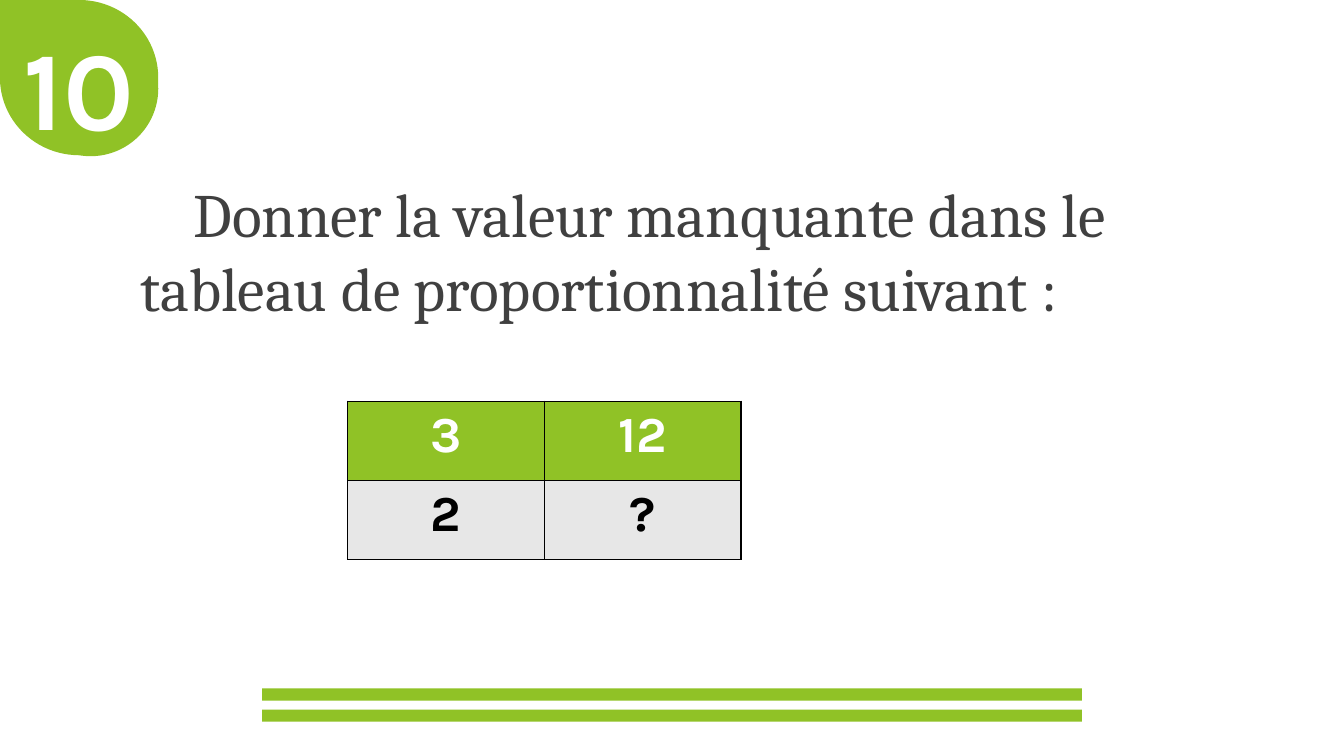
"""Build the quiz slide asking for the missing value of a proportionality table."""
from lxml import etree
from pptx import Presentation
from pptx.dml.color import RGBColor
from pptx.enum import shapes, text
from pptx.oxml import ns
from pptx.util import Inches, Pt

COLORS = {"green": "90C226", "white": "FFFFFF", "black": "000000",
          "question": "404040", "gray": "E7E7E7"}


def write(frame, words, size, color, font="Karla", bold=False,
          align=text.PP_ALIGN.CENTER):
    frame.text = words
    paragraph = frame.paragraphs[0]
    paragraph.alignment = align
    paragraph.space_before = Pt(0)
    font_format = paragraph.runs[0].font
    font_format.name = font
    font_format.size = Pt(size)
    font_format.bold = bold
    font_format.color.rgb = RGBColor.from_string(COLORS[color])
    return paragraph


def place(item, left, top, width, height):
    item.left, item.top = Inches(left), Inches(top)
    item.width, item.height = Inches(width), Inches(height)


presentation = Presentation()
presentation.slide_width = Inches(13.33)
presentation.slide_height = Inches(7.5)
slide = presentation.slides.add_slide(presentation.slide_layouts[1])
number, question = slide.placeholders

green_shapes = []
for preset, left, top, width, height in [
    (shapes.MSO_SHAPE.TEAR, 0, 0, 1.57, 1.54),
    (shapes.MSO_SHAPE.OVAL, 0.23, 0.21, 1.34, 1.34),
    (shapes.MSO_SHAPE.RECTANGLE, 2.6, 6.83, 8.13, 0.12),
    (shapes.MSO_SHAPE.RECTANGLE, 2.6, 7.04, 8.13, 0.12),
]:
    shape = slide.shapes.add_shape(preset, Inches(left), Inches(top),
                                   Inches(width), Inches(height))
    shape.shadow.inherit = False
    shape.fill.solid()
    shape.fill.fore_color.rgb = RGBColor.from_string(COLORS["green"])
    shape.line.fill.background()
    green_shapes.append(shape)
teardrop, disc = green_shapes[:2]
teardrop.element.spPr.xfrm.set("flipH", "1")

place(number, 0.13, 0.13, 1.34, 1.34)
write(number.text_frame, "10", 80, "white", bold=True, align=text.PP_ALIGN.LEFT)
number.text_frame.word_wrap = False
number.text_frame.auto_size = text.MSO_AUTO_SIZE.SHAPE_TO_FIT_TEXT
number.text_frame.vertical_anchor = text.MSO_ANCHOR.TOP
disc.element.addnext(number.element)

place(question, 0.4, 1.7, 11.09, 4.41)
paragraph = write(
    question.text_frame,
    "Donner la valeur manquante dans le tableau de proportionnalité suivant :",
    44, "question", font="Cambria")
question.text_frame.auto_size = text.MSO_AUTO_SIZE.NONE
properties = paragraph._p.get_or_add_pPr()
properties.set("marL", "0")
properties.set("indent", str(Inches(1)))
etree.SubElement(properties, ns.qn("a:buNone"))

rows = [(["3", "12"], "green", "white"), (["2", "?"], "gray", "black")]
table = slide.shapes.add_table(2, 2, Inches(3.45), Inches(3.98),
                               Inches(3.9), Inches(1.57)).table
for row_index, (values, fill, color) in enumerate(rows):
    for column_index, value in enumerate(values):
        cell = table.cell(row_index, column_index)
        write(cell.text_frame, value, 36, color, bold=True)
        cell_properties = cell._tc.get_or_add_tcPr()
        for side in ("lnL", "lnR", "lnT", "lnB"):
            border = etree.SubElement(cell_properties, ns.qn(f"a:{side}"), w=str(Pt(1)))
            solid = etree.SubElement(border, ns.qn("a:solidFill"))
            etree.SubElement(solid, ns.qn("a:srgbClr"), val=COLORS["black"])
        cell.fill.solid()
        cell.fill.fore_color.rgb = RGBColor.from_string(COLORS[fill])

presentation.save("out.pptx")
